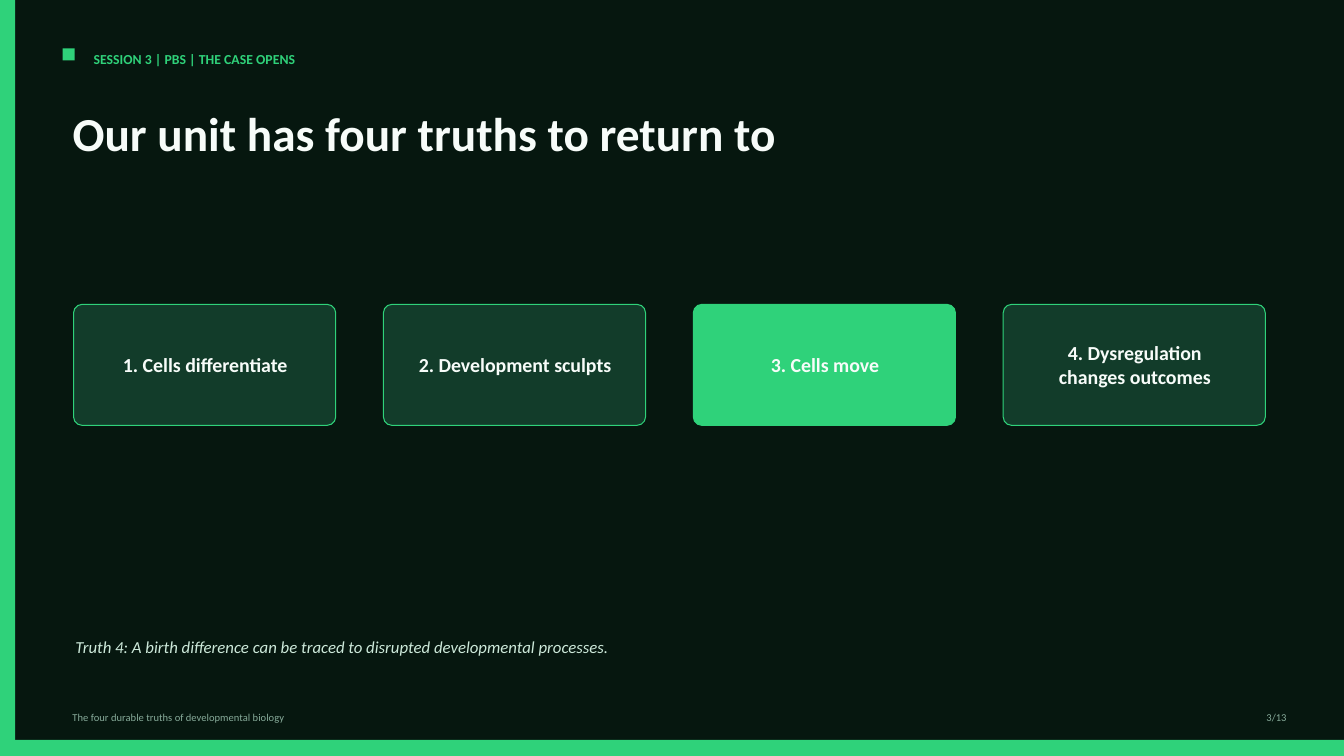
"""Build the slide on the four truths of developmental biology."""
from pptx import Presentation
from pptx.dml.color import RGBColor
from pptx.enum.shapes import MSO_SHAPE
from pptx.enum.text import MSO_ANCHOR, MSO_AUTO_SIZE, PP_ALIGN
from pptx.util import Inches, Pt

NIGHT = RGBColor(0x06, 0x17, 0x0F)
GREEN = RGBColor(0x2F, 0xD2, 0x7A)
PINE = RGBColor(0x12, 0x3C, 0x2A)
WHITE = RGBColor(0xF7, 0xFC, 0xF9)
MINT = RGBColor(0xCD, 0xE9, 0xDA)
SAGE = RGBColor(0x87, 0xAB, 0x9A)

deck = Presentation()
deck.slide_width, deck.slide_height = Inches(13.33), Inches(7.5)
slide = deck.slides.add_slide(deck.slide_layouts[5])
slide.background.fill.solid()
slide.background.fill.fore_color.rgb = NIGHT


def draw(kind, place, fill):
    shape = slide.shapes.add_shape(kind, *[Inches(n) for n in place])
    shape.shadow.inherit = False
    shape.fill.solid()
    shape.fill.fore_color.rgb = fill
    shape.line.fill.background()
    return shape


def write(words, place, size, color, bold=False, italic=False,
          align=PP_ALIGN.LEFT, anchor=MSO_ANCHOR.TOP, space=1.0, box=None):
    box = box or slide.shapes.add_textbox(0, 0, 0, 0)
    box.left, box.top, box.width, box.height = [Inches(n) for n in place]
    frame = box.text_frame
    frame.word_wrap = True
    frame.auto_size = MSO_AUTO_SIZE.NONE
    frame.vertical_anchor = anchor
    para = frame.paragraphs[0]
    para.alignment = align
    para.line_spacing = space
    run = para.add_run()
    run.text = words
    font = run.font
    font.name, font.size = "Calibri", Pt(size)
    font.bold, font.italic = bold, italic
    font.color.rgb = color


for place in [(0, 0, 0.15, 7.5), (0, 7.34, 13.33, 0.16), (0.62, 0.48, 0.12, 0.12)]:
    draw(MSO_SHAPE.RECTANGLE, place, GREEN)

write("SESSION 3 | PBS | THE CASE OPENS", (0.83, 0.45, 6.46, 0.25), 9.8, GREEN, bold=True)
write("The four durable truths of developmental biology", (0.62, 7, 9.38, 0.19), 7.5, SAGE)
write("3/13", (12.03, 7, 0.83, 0.19), 7.5, SAGE, align=PP_ALIGN.RIGHT)
write("Our unit has four truths to return to", (0.62, 1.04, 11.46, 0.88), 33.8, WHITE,
      bold=True, space=0.92, box=slide.shapes.title)

truths = [
    ("1. Cells differentiate", PINE),
    ("2. Development sculpts", PINE),
    ("3. Cells move", GREEN),
    ("4. Dysregulation changes outcomes", PINE),
]
step = (9.95 - 0.73) / (len(truths) - 1)
for i, (truth, fill) in enumerate(truths):
    left = 0.73 + i * step
    card = draw(MSO_SHAPE.ROUNDED_RECTANGLE, (left, 3.02, 2.6, 1.2), fill)
    card.adjustments[0] = 0.07
    card.line.color.rgb = GREEN
    card.line.width = Pt(0.75)
    write(truth, (left + 0.23, 3.23, 2.15, 0.78), 14.2, WHITE, bold=True,
          align=PP_ALIGN.CENTER, anchor=MSO_ANCHOR.MIDDLE)

write("Truth 4: A birth difference can be traced to disrupted developmental processes.",
      (0.65, 6.25, 11.25, 0.46), 12, MINT, italic=True, space=1.1)

deck.save("out.pptx")
